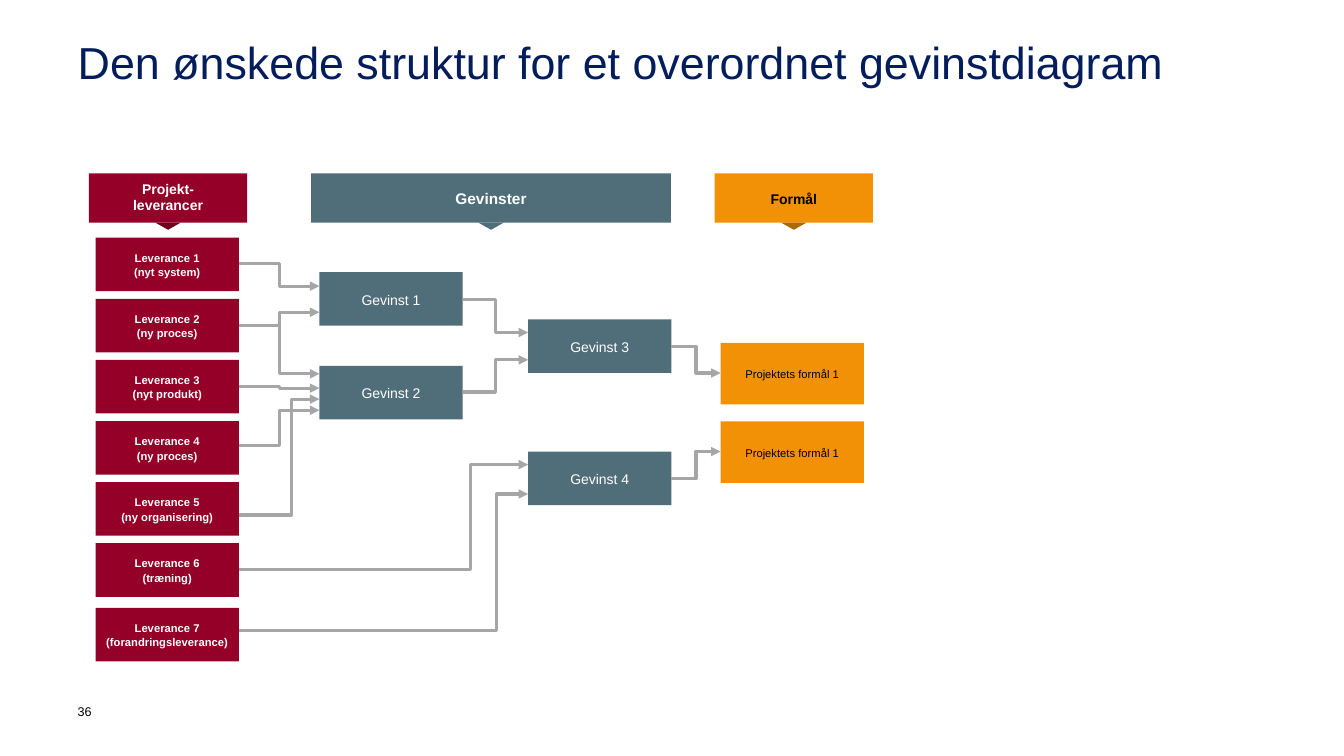
"""Build the benefits diagram slide: deliverables, benefits and purposes."""
from lxml.etree import SubElement
from pptx import Presentation
from pptx.dml.color import RGBColor
from pptx.enum.shapes import MSO_CONNECTOR, MSO_SHAPE
from pptx.enum.text import MSO_ANCHOR, PP_ALIGN
from pptx.oxml.ns import qn
from pptx.util import Cm, Pt

RED, SLATE, ORANGE = "940027", "506E7A", "F29105"
WHITE, BLACK, NAVY, GREY = "FFFFFF", "000000", "031D5C", "A6A6A6"

BOX_W, BOX_H, PURPOSE_H = 3.61, 1.35, 1.55
HEADER_TOP, HEADER_H = 4.37, 1.24
DELIVERABLE_X, GAIN_X, LATE_GAIN_X, PURPOSE_X = 2.41, 8.05, 13.31, 18.16
DELIVERABLE_TOP, DELIVERABLE_PITCH = 5.99, 1.54

HEADERS = [
    ("Projekt-\vleverancer", 2.24, 3.99, RED, "6F001D", WHITE, 10, 0.9),
    ("Gevinster", 7.84, 9.07, SLATE, SLATE, WHITE, 11, 1.08),
    ("Formål", 18.01, 3.99, ORANGE, "AD6803", BLACK, 10, 1.08),
]
DELIVERABLES = ["nyt system", "ny proces", "nyt produkt", "ny proces",
                "ny organisering", "træning"]
GAINS = [(GAIN_X, 6.86), (GAIN_X, 9.22), (LATE_GAIN_X, 8.05), (LATE_GAIN_X, 11.38)]
PURPOSE_TOPS = [8.64, 10.62]
ARROWS = [
    (DELIVERABLE_X, 6.65, GAIN_X, 7.21, 0.5),
    (DELIVERABLE_X, 8.2, GAIN_X, 7.87, 0.5),
    (DELIVERABLE_X, 8.2, GAIN_X, 9.42, 0.5),
    (DELIVERABLE_X, 9.75, GAIN_X, 9.78, 0.5),
    (DELIVERABLE_X, 11.23, GAIN_X, 10.34, 0.5),
    (DELIVERABLE_X, 12.98, GAIN_X, 10.06, 0.65),
    (DELIVERABLE_X, 14.35, LATE_GAIN_X, 11.71, 0.8),
    (DELIVERABLE_X, 15.88, LATE_GAIN_X, 12.45, 0.89),
    (GAIN_X, 7.54, LATE_GAIN_X, 8.38, 0.5),
    (GAIN_X, 9.88, LATE_GAIN_X, 9.07, 0.5),
    (LATE_GAIN_X, 8.74, PURPOSE_X, 9.4, 0.5),
    (LATE_GAIN_X, 12.06, PURPOSE_X, 11.38, 0.5),
]


def rgb(value):
    """Turn a hex string into a colour."""
    return RGBColor.from_string(value)


class Diagram:
    """Draw the diagram's elements on one slide in a shared style."""

    def __init__(self, slide, font="Arial"):
        """Keep the slide and the font."""
        self.s = slide
        self.font = font

    def set_text(self, tf, text, size, color, bold=False, align=PP_ALIGN.LEFT,
                 spacing=1.0, inset=(0, 0)):
        """Fill a text frame with evenly styled paragraphs."""
        tf.word_wrap = True
        tf.margin_left = tf.margin_right = Cm(inset[0])
        tf.margin_top = tf.margin_bottom = Cm(inset[1])
        tf.text = text
        for p in tf.paragraphs:
            p.alignment = align
            p.line_spacing = spacing
            p.font.name = self.font
            p.font.size = Pt(size)
            p.font.bold = bold
            p.font.color.rgb = rgb(color)

    def label(self, text, x, y, w, h, size, color, spacing=1.0):
        """Add a plain text box."""
        sp = self.s.shapes.add_textbox(Cm(x), Cm(y), Cm(w), Cm(h))
        self.set_text(sp.text_frame, text, size, color, spacing=spacing)

    def shape(self, kind, x, y, w, h, fill):
        """Add a flat filled shape."""
        sp = self.s.shapes.add_shape(kind, Cm(x), Cm(y), Cm(w), Cm(h))
        sp.shadow.inherit = False
        sp.fill.solid()
        sp.fill.fore_color.rgb = rgb(fill)
        sp.line.fill.background()
        return sp

    def box(self, text, x, y, w, h, fill, size, color, bold=False,
            spacing=1.08, inset=(0.1, 0)):
        """Add a rectangle with centred text."""
        tf = self.shape(MSO_SHAPE.RECTANGLE, x, y, w, h, fill).text_frame
        tf.vertical_anchor = MSO_ANCHOR.MIDDLE
        self.set_text(tf, text, size, color, bold, PP_ALIGN.CENTER, spacing, inset)

    def header(self, text, x, w, fill, pointer_fill, color, size, spacing):
        """Add a column header with a pointer below its middle."""
        self.box(text, x, HEADER_TOP, w, HEADER_H, fill, size, color, True,
                 spacing, (0.25, 0.13))
        sp = self.shape(MSO_SHAPE.ISOSCELES_TRIANGLE, x + w / 2 - 0.32,
                        HEADER_TOP + HEADER_H, 0.64, 0.18, pointer_fill)
        sp.rotation = 180

    def deliverable(self, number, note, y):
        """Add a numbered deliverable with its note."""
        self.box(f"Leverance {number}\n({note})", DELIVERABLE_X, y, BOX_W, BOX_H,
                 RED, 8, WHITE, True, inset=(0.1, 0.1))

    def arrow(self, from_x, y1, to_x, y2, bend):
        """Add an elbow arrow from one column's right edge to another's left."""
        cxn = self.s.shapes.add_connector(
            MSO_CONNECTOR.ELBOW, Cm(from_x + BOX_W), Cm(y1), Cm(to_x), Cm(y2))
        cxn.line.color.rgb = rgb(GREY)
        cxn.line.width = Pt(2.25)
        sp_pr = cxn._element.spPr
        SubElement(sp_pr.find(qn("a:ln")), qn("a:tailEnd"), type="triangle")
        SubElement(sp_pr, qn("a:effectLst"))
        guides = sp_pr.find(qn("a:prstGeom")).find(qn("a:avLst"))
        SubElement(guides, qn("a:gd"), name="adj1", fmla=f"val {round(bend * 100000)}")


def main():
    """Create the presentation and save it."""
    prs = Presentation()
    prs.slide_width, prs.slide_height = Cm(33.87), Cm(19.05)
    d = Diagram(prs.slides.add_slide(prs.slide_layouts[6]))

    d.label("Den ønskede struktur for et overordnet gevinstdiagram",
            1.96, 1.02, 29.97, 2.59, 32, NAVY, 0.9)
    d.label("36", 1.96, 17.73, 0.79, 0.99, 9, BLACK)
    for header in HEADERS:
        d.header(*header)
    for i, note in enumerate(DELIVERABLES):
        d.deliverable(i + 1, note, DELIVERABLE_TOP + i * DELIVERABLE_PITCH)
    d.deliverable(7, "forandringsleverance", 15.32)
    for number, (x, y) in enumerate(GAINS, 1):
        d.box(f"Gevinst {number}", x, y, BOX_W, BOX_H, SLATE, 10, WHITE)
    for y in PURPOSE_TOPS:
        d.box("Projektets formål 1", PURPOSE_X, y, BOX_W, PURPOSE_H, ORANGE, 8, BLACK)
    for arrow in ARROWS:
        d.arrow(*arrow)

    prs.save("out.pptx")


if __name__ == "__main__":
    main()
